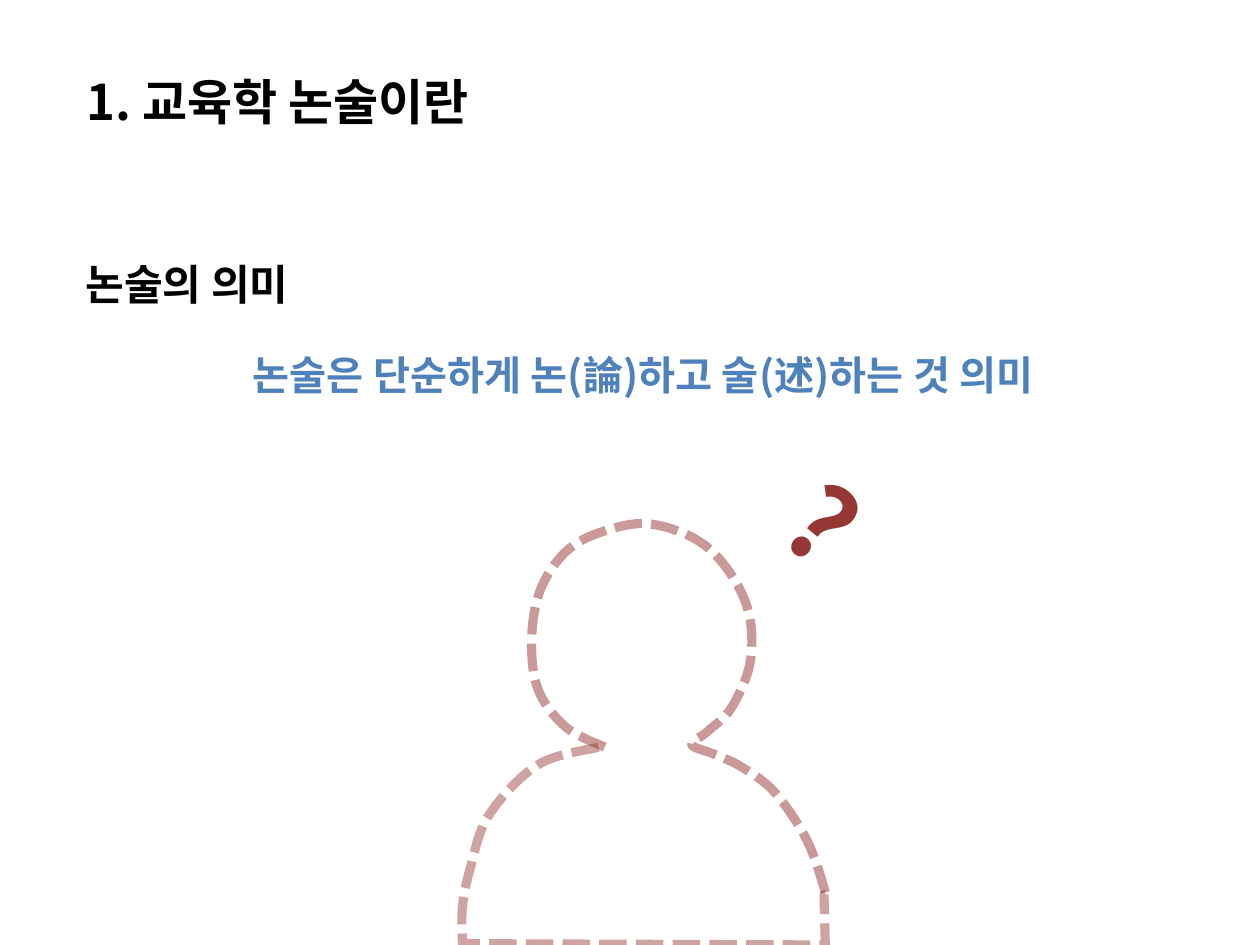
from lxml.etree import SubElement
from pptx import Presentation
from pptx.dml.color import RGBColor
from pptx.enum.dml import MSO_LINE
from pptx.enum.text import MSO_ANCHOR, PP_ALIGN
from pptx.oxml.ns import qn
from pptx.util import Pt

PX = 9144
FONT = "Noto Sans CJK KR"
DARK = "953735"
HEAD = [(480, 593), (449, 577), (427, 547), (422, 507), (429, 468), (449, 438),
        (478, 422), (517, 416), (561, 434), (591, 476), (596, 522), (581, 561),
        (561, 581), (549, 591), (568, 599), (589, 609), (615, 629), (641, 668),
        (656, 711)]
TORSO = [(475, 593), (427, 607), (388, 647), (373, 690), (367, 720), (367, 749)]
BASE = [(655, 750), (654, 710), (655, 710)]


def color(code):
    return RGBColor.from_string(code)


def apply(item, values):
    for name, value in values.items():
        setattr(item, name, value)


def place(shape, left, top, width, height):
    apply(shape, {"left": left * PX, "top": top * PX,
                  "width": width * PX, "height": height * PX})


def write(shape, text, size, code, align=PP_ALIGN.LEFT, indent=0):
    frame = shape.text_frame
    apply(frame, {"word_wrap": True, "vertical_anchor": MSO_ANCHOR.TOP})
    para = frame.paragraphs[0]
    apply(para, {"alignment": align, "line_spacing": 1.0, "space_before": Pt(0)})
    props = para._p.get_or_add_pPr()
    props.set("marL", str(indent * PX))
    props.set("indent", str(-indent * PX))
    SubElement(props, qn("a:buNone"))
    run = para.add_run()
    run.text = text
    apply(run.font, {"name": FONT, "size": Pt(size), "bold": True})
    run.font.color.rgb = color(code)
    SubElement(run.font._element, qn("a:ea"), typeface=FONT)


def add_label(slide, box, *style):
    shape = slide.shapes.add_textbox(0, 0, 0, 0)
    place(shape, *box)
    write(shape, *style)
    return shape


def bend(shape, count):
    root = shape._element
    knots = [(int(p.get("x")), int(p.get("y"))) for p in root.iter(qn("a:pt"))]
    ends = [knots[0], *knots[:count + 1], knots[count]]
    parts = list(root.iter(qn("a:lnTo")))[:count]
    for part, a, b, c, d in zip(parts, ends, ends[1:], ends[2:], ends[3:]):
        first = [q + (r - p) / 6 for p, q, r in zip(a, b, c)]
        second = [q - (r - p) / 6 for p, q, r in zip(b, c, d)]
        curve = part.makeelement(qn("a:cubicBezTo"))
        for x, y in (first, second, c):
            SubElement(curve, qn("a:pt"), x=str(round(x)), y=str(round(y)))
        part.getparent().replace(part, curve)


def add_curve(group, knots, tail, alpha):
    start, *rest = [(x * PX, y * PX) for x, y in knots + tail]
    pen = group.shapes.build_freeform(*start)
    pen.add_line_segments(rest, close=False)
    shape = pen.convert_to_shape()
    bend(shape, len(knots) - 1)
    shape.shadow.inherit = False
    shape.fill.background()
    line = shape.line
    line.color.rgb = color(DARK)
    apply(line, {"width": Pt(5.25), "dash_style": MSO_LINE.SQUARE_DOT})
    tint = line._ln.find(".//" + qn("a:srgbClr"))
    SubElement(tint, qn("a:alpha"), val=str(alpha * 1000))


def main():
    deck = Presentation()
    apply(deck, {"slide_width": 1000 * PX, "slide_height": 750 * PX})
    slide = deck.slides.add_slide(deck.slide_layouts[1])
    title, body = slide.placeholders
    place(title, 59, 52, 798, 55)
    write(title, "1. 교육학 논술이란", 28, "000000", PP_ALIGN.LEFT, 38)
    place(body, 58, 200, 798, 55)
    write(body, "논술의 의미", 24, "000000", PP_ALIGN.LEFT, 38)
    claim = add_label(slide, (159, 273, 703, 49),
                      "논술은 단순하게 논(論)하고 술(述)하는 것 의미",
                      23, "4F81BD", PP_ALIGN.CENTER, 38)
    apply(claim.text_frame, {"margin_left": 16 * PX, "margin_right": 16 * PX})
    mark = add_label(slide, (621, 364, 78, 111), "?", 60, DARK)
    mark.rotation = 39.3
    person = slide.shapes.add_group_shape()
    add_curve(person, TORSO, BASE, 46)
    add_curve(person, HEAD, [], 49)
    deck.save("out.pptx")


if __name__ == "__main__":
    main()
